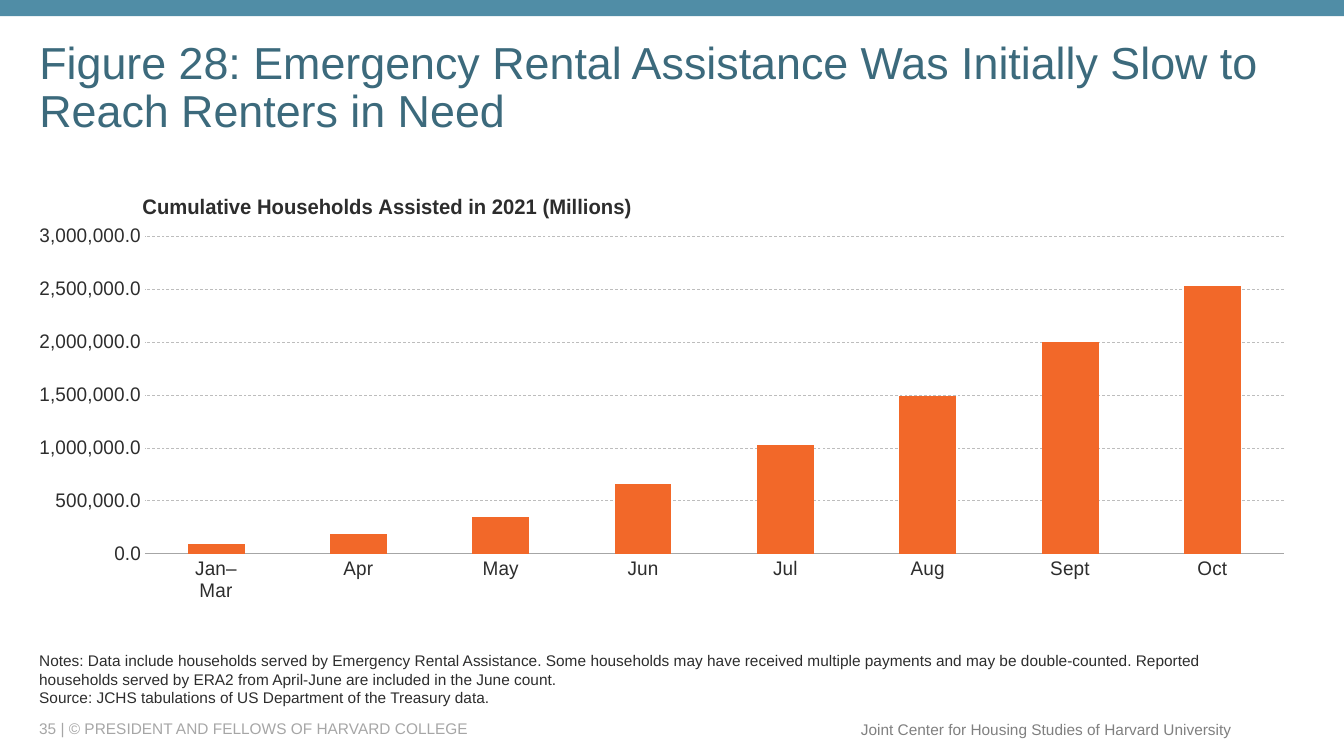
from lxml.etree import SubElement
from pptx import Presentation
from pptx.chart.data import CategoryChartData
from pptx.dml.color import RGBColor
from pptx.enum.chart import XL_CHART_TYPE, XL_TICK_MARK
from pptx.enum.dml import MSO_LINE
from pptx.enum.shapes import MSO_SHAPE
from pptx.enum.text import MSO_ANCHOR, MSO_AUTO_SIZE, PP_ALIGN
from pptx.oxml.ns import qn
from pptx.util import Inches, Pt

GRID_STEP = 0.1
COLUMNS, ROWS = 133.33, 75
FONT = "Arial"
COLOURS = {
    "band": "508DA6",
    "heading": "3C6A7C",
    "ink": "2D2D2D",
    "copyright": "A6A6A6",
    "centre": "808080",
    "axis": "A6A6A6",
    "grid": "BDBDBD",
    "bars": "F26829",
}
HOUSEHOLDS = {
    "Jan–\nMar": 90000,
    "Apr": 190000,
    "May": 350000,
    "Jun": 660000,
    "Jul": 1030000,
    "Aug": 1490000,
    "Sept": 2000000,
    "Oct": 2530000,
}
NOTES = [
    "Notes: Data include households served by Emergency Rental Assistance. "
    "Some households may have received multiple payments and may be double-counted. "
    "Reported households served by ERA2 from April-June are included in the June count.",
    "Source: JCHS tabulations of US Department of the Treasury data.",
]


def cells(*counts):
    """Turn counts of grid columns and rows into lengths."""
    return [Inches(count * GRID_STEP) for count in counts]


def colour(role):
    """Return the colour of a role."""
    return RGBColor.from_string(COLOURS[role])


def apply(target, values):
    """Set each attribute of a target from a dict."""
    for attribute, value in values.items():
        setattr(target, attribute, value)


def style_font(font, size, role, bold=False):
    """Give a font its face, size, weight and colour."""
    apply(font, {"name": FONT, "size": Pt(size), "bold": bold})
    font.color.rgb = colour(role)


def style_line(line, role):
    """Give a chart line its colour and hairline width."""
    line.color.rgb = colour(role)
    line.width = Pt(0.5)


def write(frame, paragraphs, size, role, frame_format, paragraph_format):
    """Fill a text frame with formatted paragraphs."""
    apply(frame, {"word_wrap": True, "auto_size": MSO_AUTO_SIZE.NONE, **frame_format})
    frame.text = "\n".join(paragraphs)
    for paragraph in frame.paragraphs:
        apply(paragraph, {"alignment": PP_ALIGN.LEFT, **paragraph_format})
        style_font(paragraph.font, size, role)


def add_heading(slide, heading):
    """Place and format the title placeholder."""
    left, top, width, height = cells(2.9, 4, 126.5, 9.7)
    apply(slide.shapes.title, {"left": left, "top": top, "width": width, "height": height})
    write(slide.shapes.title.text_frame, [heading], 32, "heading",
          {"vertical_anchor": MSO_ANCHOR.MIDDLE}, {"line_spacing": 0.9})


def add_small_print(slide, place, paragraphs, role, frame_format, paragraph_format):
    """Add a box of small text on the grid."""
    box = slide.shapes.add_textbox(*cells(*place))
    write(box.text_frame, paragraphs, 11, role, frame_format, paragraph_format)


def add_band(slide):
    """Add the coloured band along the top edge."""
    band = slide.shapes.add_shape(MSO_SHAPE.RECTANGLE, *cells(0, 0, COLUMNS, 1.6))
    band.shadow.inherit = False
    band.fill.solid()
    band.fill.fore_color.rgb = colour("band")
    band.line.fill.background()


def set_layout(parent, index, shares):
    """Fix the place of a chart part as shares of the chart."""
    for automatic in parent.findall(qn("c:layout")):
        parent.remove(automatic)
    layout = SubElement(parent, qn("c:layout"))
    parent.insert(index, layout)
    manual = SubElement(layout, qn("c:manualLayout"))
    for tag, value in shares.items():
        SubElement(manual, qn(f"c:{tag}")).set("val", str(value))


def add_household_chart(slide):
    """Add the column chart of households assisted."""
    figures = CategoryChartData(number_format="#,##0")
    figures.categories = list(HOUSEHOLDS)
    figures.add_series("Series 1", list(HOUSEHOLDS.values()))
    chart = slide.shapes.add_chart(
        XL_CHART_TYPE.COLUMN_CLUSTERED, *cells(3.9, 16.7, 125.5, 49.1), figures).chart
    style_font(chart.font, 14, "ink")
    chart.has_legend = False

    caption = chart.chart_title
    caption.text_frame.text = "Cumulative Households Assisted in 2021 (Millions)"
    style_font(caption.text_frame.paragraphs[0].runs[0].font, 15, "ink", bold=True)
    set_layout(caption.element, 1, {"xMode": "edge", "yMode": "edge", "x": 0.045, "y": 0.042})
    set_layout(chart.element.find(f".//{qn('c:plotArea')}"), 0, {
        "layoutTarget": "inner", "xMode": "edge", "yMode": "edge",
        "x": 0.05, "y": 0.137, "w": 0.933, "h": 0.642})

    columns = chart.plots[0]
    apply(columns, {"gap_width": 150, "vary_by_categories": False})
    columns.series[0].format.fill.solid()
    columns.series[0].format.fill.fore_color.rgb = colour("bars")

    months, counts = chart.category_axis, chart.value_axis
    for axis in (months, counts):
        apply(axis, {"major_tick_mark": XL_TICK_MARK.NONE, "minor_tick_mark": XL_TICK_MARK.NONE})
        style_font(axis.tick_labels.font, 14, "ink")
    style_line(months.format.line, "axis")
    apply(counts, {"minimum_scale": 0, "maximum_scale": 3000000, "major_unit": 500000,
                   "has_major_gridlines": True})
    apply(counts.tick_labels, {"number_format": "#,##0.0", "number_format_is_linked": False})
    counts.format.line.fill.background()
    gridline = counts.major_gridlines.format.line
    style_line(gridline, "grid")
    gridline.dash_style = MSO_LINE.DASH


def main():
    """Build the slide and save it."""
    deck = Presentation()
    deck.slide_width, deck.slide_height = cells(COLUMNS, ROWS)
    slide = deck.slides.add_slide(deck.slide_layouts[5])
    add_band(slide)
    add_heading(slide, "Figure 28: Emergency Rental Assistance Was Initially Slow to "
                       "Reach Renters in Need")
    add_household_chart(slide)
    add_small_print(slide, (2.9, 64.8, 117.5, 5.8), NOTES, "ink",
                    {"vertical_anchor": MSO_ANCHOR.BOTTOM}, {})
    add_small_print(slide, (2.9, 71.3, 79.2, 2),
                    ["35 | © PRESIDENT AND FELLOWS OF HARVARD COLLEGE"], "copyright",
                    {"vertical_anchor": MSO_ANCHOR.MIDDLE}, {})
    add_small_print(slide, (84.2, 70.9, 39, 2.9),
                    ["Joint Center for Housing Studies of Harvard University"], "centre",
                    {"vertical_anchor": MSO_ANCHOR.MIDDLE, "word_wrap": False,
                     "auto_size": MSO_AUTO_SIZE.SHAPE_TO_FIT_TEXT},
                    {"alignment": PP_ALIGN.RIGHT})
    deck.save("out.pptx")


if __name__ == "__main__":
    main()
